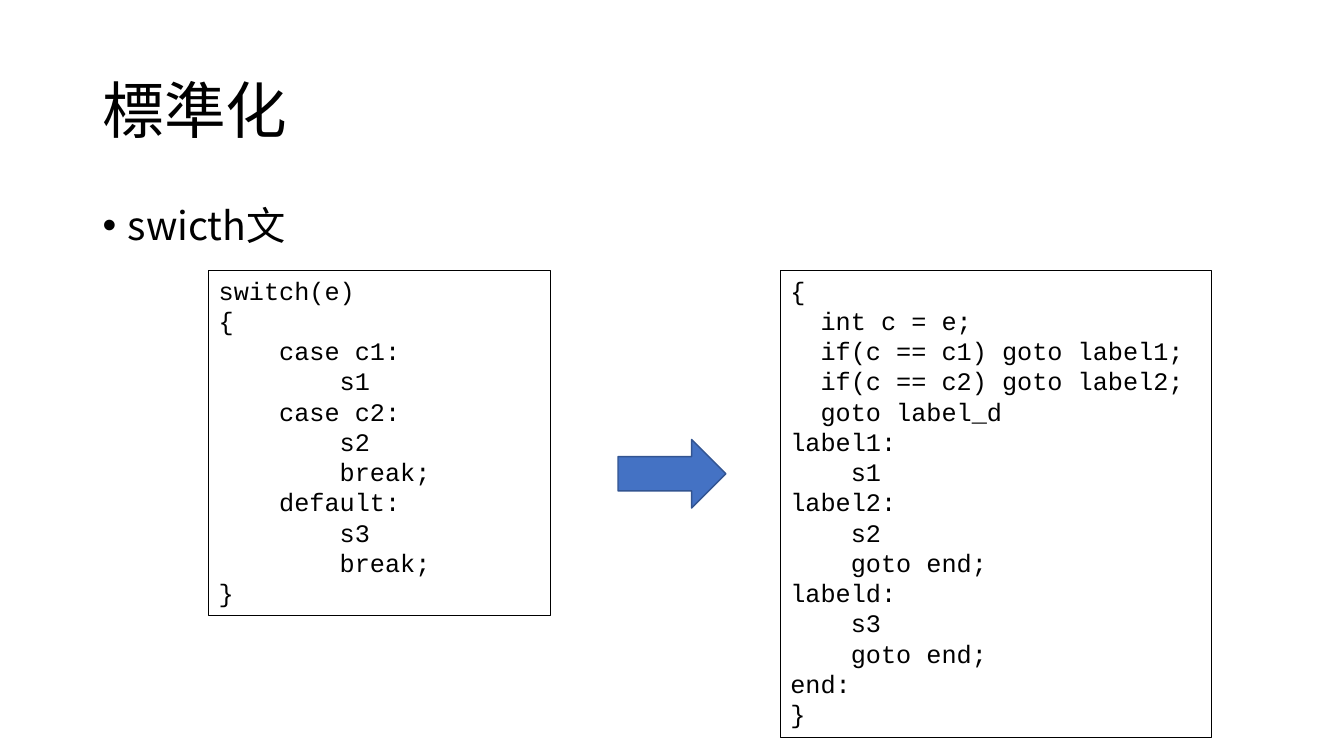
"""Build the slide that normalises a switch statement into goto form."""
from dataclasses import dataclass

from lxml.etree import SubElement
from pptx import Presentation
from pptx.dml.color import RGBColor
from pptx.enum.shapes import MSO_SHAPE
from pptx.enum.text import MSO_ANCHOR, MSO_AUTO_SIZE
from pptx.oxml.ns import qn
from pptx.util import Inches, Pt

TITLE = "標準化"
BULLET = "swicth文"
SWITCH_CODE = """switch(e)
{
    case c1:
        s1
    case c2:
        s2
        break;
    default:
        s3
        break;
}"""
GOTO_CODE = """{
  int c = e;
  if(c == c1) goto label1;
  if(c == c2) goto label2;
  goto label_d
label1:
    s1
label2:
    s2
    goto end;
labeld:
    s3
    goto end;
end:
}"""
CODE_BOXES = [
    (SWITCH_CODE, (2.07, 2.68, 3.39, 3.43)),
    (GOTO_CODE, (7.74, 2.68, 4.28, 4.64)),
]
TITLE_AREA = (0.92, 0.4, 11.5, 1.45)
BODY_AREA = (0.92, 2, 11.5, 4.76)
ARROW_AREA = (6.13, 4.36, 1.07, 0.68)


@dataclass(frozen=True)
class Theme:
    text_font: str = "Noto Sans CJK JP"
    code_font: str = "Courier New"
    title_size: int = 44
    body_size: int = 28
    code_size: int = 18
    code_column: float = 0.15
    black: RGBColor = RGBColor(0, 0, 0)
    arrow_fill: RGBColor = RGBColor(0x44, 0x72, 0xC4)
    arrow_line: RGBColor = RGBColor(0x32, 0x54, 0x91)


THEME = Theme()


def place(area):
    return [Inches(length) for length in area]


def add_run(paragraph, text, font_name, size):
    run = paragraph.add_run()
    run.text = text
    run.font.name = font_name
    run.font.size = Pt(size)
    run.font.color.rgb = THEME.black
    SubElement(run.font._element, qn("a:ea")).set("typeface", font_name)


def add_text_box(slide, area):
    text_box = slide.shapes.add_textbox(*place(area))
    text_box.text_frame.word_wrap = True
    return text_box


def set_indent(paragraph, left, first_line=0):
    properties = paragraph._p.get_or_add_pPr()
    properties.set("marL", str(Inches(left)))
    properties.set("indent", str(Inches(first_line)))
    return properties


def add_title(slide):
    text_frame = add_text_box(slide, TITLE_AREA).text_frame
    text_frame.vertical_anchor = MSO_ANCHOR.MIDDLE
    paragraph = text_frame.paragraphs[0]
    paragraph.line_spacing = 0.9
    add_run(paragraph, TITLE, THEME.text_font, THEME.title_size)


def add_bullet(slide):
    paragraph = add_text_box(slide, BODY_AREA).text_frame.paragraphs[0]
    paragraph.line_spacing = 0.9
    paragraph.space_before = Pt(10)
    properties = set_indent(paragraph, 0.25, -0.25)
    SubElement(properties, qn("a:buFont")).set("typeface", "Arial")
    SubElement(properties, qn("a:buChar")).set("char", "•")
    add_run(paragraph, BULLET, THEME.text_font, THEME.body_size)


def add_code_box(slide, code, area):
    text_box = add_text_box(slide, area)
    text_box.line.color.rgb = THEME.black
    text_box.line.width = Pt(0.75)
    text_frame = text_box.text_frame
    text_frame.auto_size = MSO_AUTO_SIZE.SHAPE_TO_FIT_TEXT
    for index, line in enumerate(code.splitlines()):
        paragraph = text_frame.add_paragraph() if index else text_frame.paragraphs[0]
        statement = line.lstrip()
        set_indent(paragraph, (len(line) - len(statement)) * THEME.code_column)
        add_run(paragraph, statement, THEME.code_font, THEME.code_size)


def add_arrow(slide):
    arrow = slide.shapes.add_shape(MSO_SHAPE.RIGHT_ARROW, *place(ARROW_AREA))
    arrow.shadow.inherit = False
    arrow.fill.solid()
    arrow.fill.fore_color.rgb = THEME.arrow_fill
    arrow.line.color.rgb = THEME.arrow_line
    arrow.line.width = Pt(1)


def main():
    presentation = Presentation()
    presentation.slide_width = Inches(13.33)
    presentation.slide_height = Inches(7.5)
    slide = presentation.slides.add_slide(presentation.slide_layouts[6])
    add_title(slide)
    add_bullet(slide)
    for code, area in CODE_BOXES:
        add_code_box(slide, code, area)
    add_arrow(slide)
    presentation.save("out.pptx")


if __name__ == "__main__":
    main()
